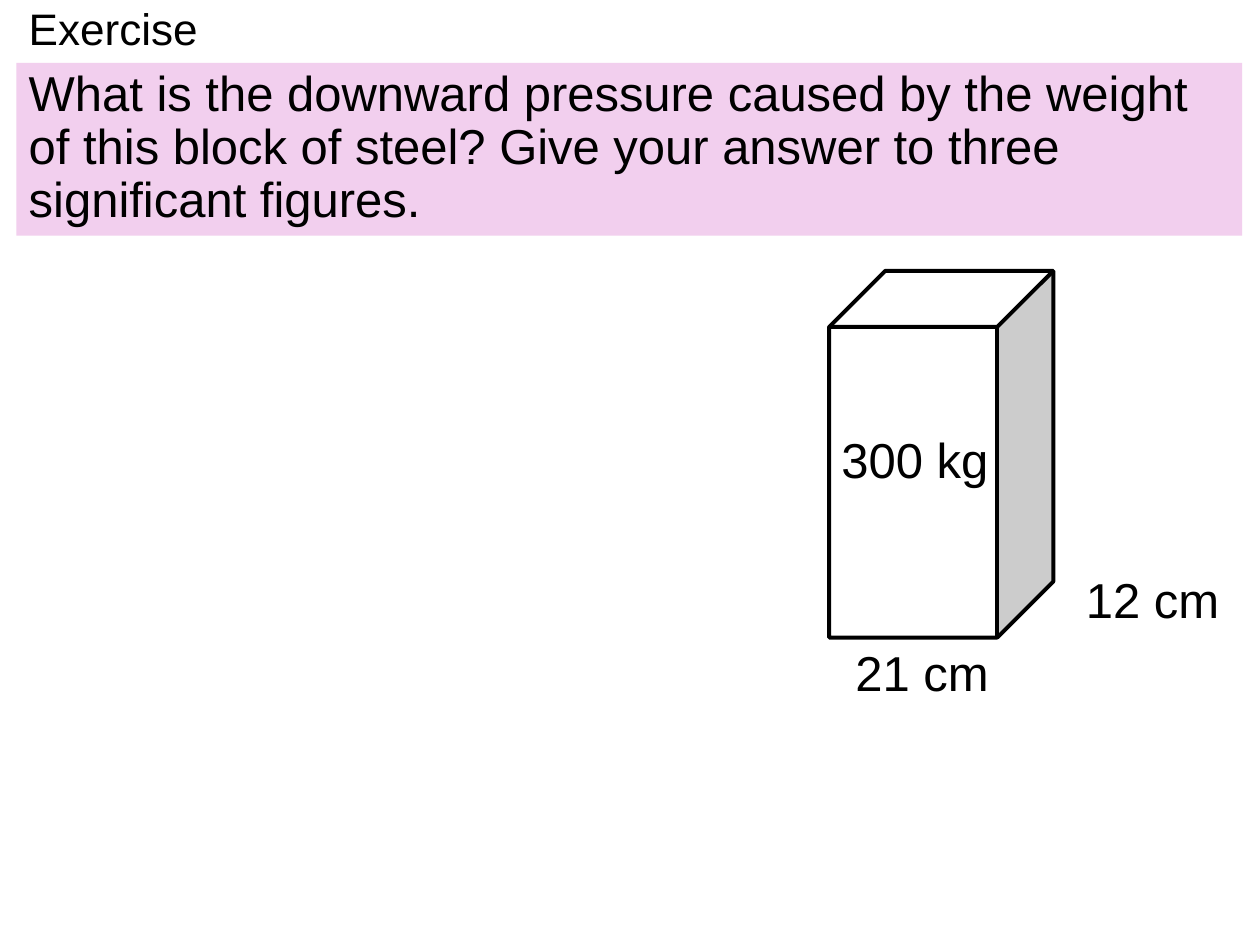
from pptx import Presentation
from pptx.dml.color import RGBColor
from pptx.enum.shapes import MSO_SHAPE
from pptx.enum.text import MSO_ANCHOR
from pptx.util import Inches, Pt

COLORS = {"ink": "000000", "face": "FFFFFF", "panel": "F2CFEE"}
FONT = "Arial"

HEADING = ("Exercise", (0.13, 0, 7.23, 0.5), 25.2)
QUESTION = (
    "What is the downward pressure caused by the weight of this block of steel? "
    "Give your answer to three significant figures.",
    (0.13, 0.5, 9.73, 1.37),
    28,
)
BLOCK = (6.58, 2.15, 1.78, 2.91)
MEASURES = [
    ("300 kg", (6.58, 3.36, 1.38, 0.57)),
    ("21 cm", (6.69, 5.05, 1.27, 0.57)),
    ("12 cm", (8.52, 4.47, 1.27, 0.57)),
]


def color(name):
    return RGBColor.from_string(COLORS[name])


def add_text(slide, text, place, size, wrap=True):
    box = slide.shapes.add_textbox(*map(Inches, place))
    frame = box.text_frame
    frame.text = text
    frame.word_wrap = wrap
    paragraph = frame.paragraphs[0]
    font = paragraph.runs[0].font
    font.name, font.size = FONT, Pt(size)
    font.color.rgb = color("ink")
    return box, paragraph


def main():
    deck = Presentation()
    deck.slide_width, deck.slide_height = Inches(10), Inches(7.5)
    slide = deck.slides.add_slide(deck.slide_layouts[6])

    block = slide.shapes.add_shape(MSO_SHAPE.CUBE, *map(Inches, BLOCK))
    block.shadow.inherit = False
    block.fill.solid()
    block.fill.fore_color.rgb = color("face")
    block.line.color.rgb = color("ink")
    block.line.width = Pt(2.25)

    heading, heading_line = add_text(slide, *HEADING)
    heading.text_frame.vertical_anchor = MSO_ANCHOR.MIDDLE
    heading_line.line_spacing = 0.9

    question, question_lines = add_text(slide, *QUESTION)
    question.fill.solid()
    question.fill.fore_color.rgb = color("panel")
    question_lines.line_spacing = 0.9
    question_lines.space_before = Pt(10)

    for text, place in MEASURES:
        _, measure_line = add_text(slide, text, place, 28, wrap=False)
        measure_line.space_after = Pt(12)

    deck.save("out.pptx")


if __name__ == "__main__":
    main()
